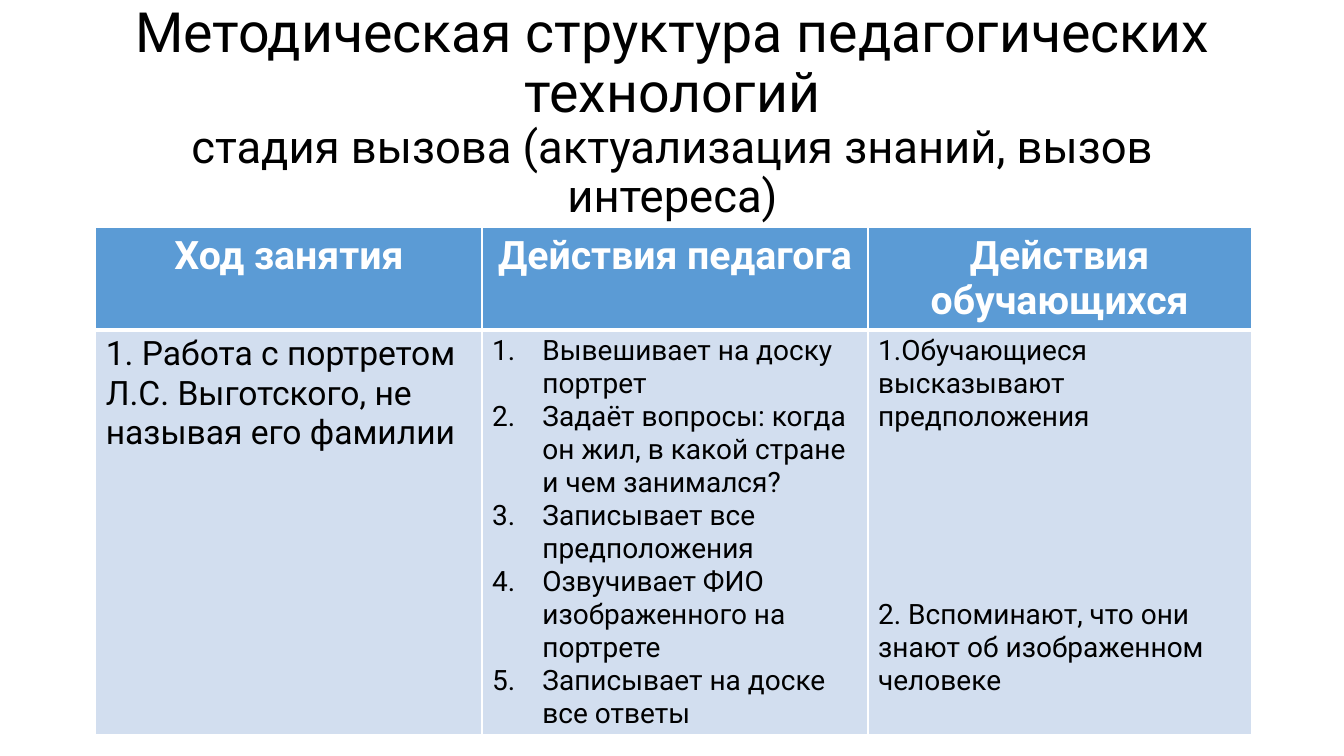
import dataclasses

import pptx
import pptx.dml.color
import pptx.enum.text
import pptx.oxml
import pptx.oxml.ns
import pptx.util

Inches, Pt = pptx.util.Inches, pptx.util.Pt
Color = pptx.dml.color.RGBColor.from_string
Align = pptx.enum.text.PP_ALIGN
Anchor = pptx.enum.text.MSO_ANCHOR


@dataclasses.dataclass(frozen=True)
class Theme:
    """Colours and type sizes of the slide."""
    font: str = "Roboto"
    ink: str = "000000"
    paper: str = "FFFFFF"
    header: str = "5B9BD5"
    body: str = "D2DEEF"
    title_size: float = 39.6
    subtitle_size: float = 32.4
    header_size: float = 28
    lesson_size: float = 24
    action_size: float = 20
    thin_line: float = 1
    thick_line: float = 3


THEME = Theme()
TITLE = "Методическая структура педагогических технологий"
SUBTITLE = "стадия вызова (актуализация знаний, вызов интереса)"
HEADERS = ["Ход занятия", "Действия педагога", "Действия обучающихся"]
LESSON_STEPS = ["1. Работа с портретом Л.С. Выготского, не называя его фамилии"]
TEACHER_ACTIONS = [
    "Вывешивает на доску портрет",
    "Задаёт вопросы: когда он жил, в какой стране и чем занимался?",
    "Записывает все предположения",
    "Озвучивает ФИО изображенного на портрете",
    "Записывает на доске все ответы",
]
STUDENT_ACTIONS = [
    "1.Обучающиеся высказывают предположения",
    "2. Вспоминают, что они знают об изображенном человеке",
]
COLUMN_WIDTHS = [3.83, 3.83, 3.8]
ROW_HEIGHTS = [1.01, 4.02]
STUDENT_GAP = 118


def style_span(span, size, color, bold=False):
    """Apply the theme font with a size, colour and weight."""
    span.font.name = THEME.font
    span.font.size = Pt(size)
    span.font.bold = bold
    span.font.color.rgb = Color(color)


def add_title(page, left, top, width, height):
    """Place the two-level heading, centred in its box."""
    box = page.shapes.add_textbox(*map(Inches, (left, top, width, height)))
    frame = box.text_frame
    frame.word_wrap = True
    frame.auto_size = pptx.enum.text.MSO_AUTO_SIZE.NONE
    frame.vertical_anchor = Anchor.MIDDLE
    para = frame.paragraphs[0]
    para.text = f"{TITLE}\v{SUBTITLE}"
    para.alignment = Align.CENTER
    para.line_spacing = 0.9
    for span, size in zip(para.runs, (THEME.title_size, THEME.subtitle_size)):
        style_span(span, size, THEME.ink)


def set_borders(cell, top, bottom):
    """Draw the cell's borders in the paper colour."""
    properties = cell._tc.get_or_add_tcPr()
    widths = {"L": THEME.thin_line, "R": THEME.thin_line, "T": top, "B": bottom}
    for position, (side, width) in enumerate(widths.items()):
        line = pptx.oxml.parse_xml(
            f'<a:ln{side} {pptx.oxml.ns.nsdecls("a")} w="{Pt(width)}"><a:solidFill>'
            f'<a:srgbClr val="{THEME.paper}"/></a:solidFill></a:ln{side}>')
        properties.insert(position, line)


def fill_cell(cell, lines, size, color, fill, bold=False, align=Align.LEFT):
    """Write one paragraph per line and colour the cell."""
    cell.fill.solid()
    cell.fill.fore_color.rgb = Color(fill)
    cell.text_frame.text = "\n".join(lines)
    for para in cell.text_frame.paragraphs:
        para.alignment = align
        for span in para.runs:
            style_span(span, size, color, bold)


def number_paragraphs(frame, indent):
    """Turn the paragraphs into a numbered list with a hanging indent."""
    for para in frame.paragraphs:
        properties = para._p.get_or_add_pPr()
        properties.set("marL", str(Inches(indent)))
        properties.set("indent", str(-Inches(indent)))
        properties.append(pptx.oxml.parse_xml(
            f'<a:buAutoNum {pptx.oxml.ns.nsdecls("a")} type="arabicPeriod"/>'))


def add_lesson_table(page, left, top):
    """Place the table of lesson steps and the actions of both sides."""
    width, height = sum(COLUMN_WIDTHS), sum(ROW_HEIGHTS)
    box = page.shapes.add_table(
        len(ROW_HEIGHTS), len(COLUMN_WIDTHS), *map(Inches, (left, top, width, height)))
    table = box.table
    for column, size in zip(table.columns, COLUMN_WIDTHS):
        column.width = Inches(size)
    for row, size in zip(table.rows, ROW_HEIGHTS):
        row.height = Inches(size)
    bodies = [
        (LESSON_STEPS, THEME.lesson_size),
        (TEACHER_ACTIONS, THEME.action_size),
        (STUDENT_ACTIONS, THEME.action_size),
    ]
    for index, (header, (lines, size)) in enumerate(zip(HEADERS, bodies)):
        head, body = table.cell(0, index), table.cell(1, index)
        fill_cell(head, [header], THEME.header_size, THEME.paper, THEME.header,
                  bold=True, align=Align.CENTER)
        fill_cell(body, lines, size, THEME.ink, THEME.body)
        set_borders(head, THEME.thin_line, THEME.thick_line)
        set_borders(body, THEME.thick_line, THEME.thin_line)
    number_paragraphs(table.cell(1, 1).text_frame, 0.5)
    table.cell(1, 2).text_frame.paragraphs[1].space_before = Pt(STUDENT_GAP)


def main():
    """Build the slide and save the deck."""
    deck = pptx.Presentation()
    deck.slide_width, deck.slide_height = Inches(13.33), Inches(7.5)
    page = deck.slides.add_slide(deck.slide_layouts[6])
    add_title(page, 0.92, 0.4, 11.5, 1.45)
    add_lesson_table(page, 0.95, 2.26)
    deck.save("out.pptx")


if __name__ == "__main__":
    main()
